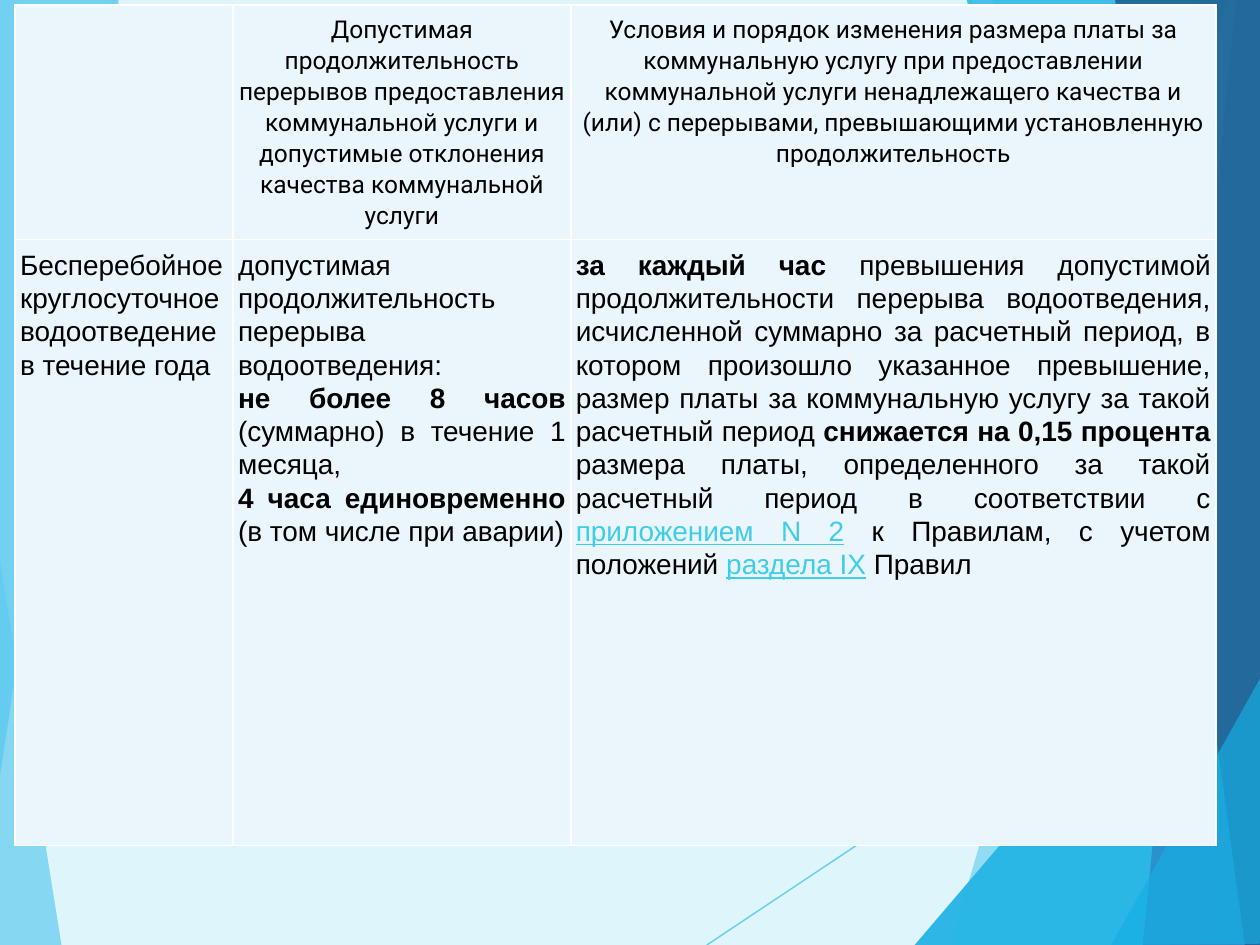
import pptx
import pptx.dml.color
import pptx.enum.shapes
import pptx.enum.text
import pptx.oxml
import pptx.oxml.ns
import pptx.util
from pptx.util import Inches

COLORS = {
    "background": "DFF5FC", "sky": "5FCBEF", "cyan": "17B0E4",
    "blue": "2E83C3", "navy": "226292", "cell": "EAF6FC",
    "border": "FFFFFF", "text": "000000", "link": "3FCDE7",
}
RGB = {name: pptx.dml.color.RGBColor.from_string(code) for name, code in COLORS.items()}
ALIGN = pptx.enum.text.PP_ALIGN
qn = pptx.oxml.ns.qn


def paint(fill, color, opacity):
    """Give a fill a solid colour with an opacity in percent."""
    fill.solid()
    fill.fore_color.rgb = RGB[color]
    tone = fill._xPr.find(qn("a:solidFill"))[0]
    tone.append(tone.makeelement(qn("a:alpha"), {"val": str(opacity * 1000)}))


def add_text(para, text, size=16, font="Arial", color="text", bold=False, underline=False):
    span = para.add_run()
    span.text = text
    span.font.size = pptx.util.Pt(size)
    span.font.name = font
    span.font.color.rgb = RGB[color]
    span.font.bold = bold
    span.font.underline = underline


deck = pptx.Presentation()
deck.slide_width, deck.slide_height = Inches(10), Inches(7.5)
page = deck.slides.add_slide(deck.slide_layouts[6])
page.background.fill.solid()
page.background.fill.fore_color.rgb = RGB["background"]

# Background facets: colour, opacity, corner points
left_bottom = ("sky", 70, [(-0.01, 4.39), (0.49, 7.51), (-0.01, 7.5)])
left_top = ("sky", 85, [(-0.01, 0), (0.94, -0.01), (0.94, 0.01), (-0.01, 6.22)])
right_facets = [
    ("sky", 36, [(9.75, 0), (7.54, 7.5), (10.02, 7.51), (10.01, 0.01)]),
    ("sky", 20, [(7.88, -0.01), (9.19, 7.5), (10.01, 7.5), (10.01, -0.01)]),
    ("cyan", 66, [(7.26, 7.5), (10, 4.29), (10.01, 7.5)]),
    ("cyan", 50, [(7.67, -0.01), (9.7, 7.5), (10.01, 7.49), (10.01, -0.01)]),
    ("blue", 70, [(9.81, -0.01), (9.07, 7.5), (10.01, 7.5), (10, -0.01)]),
    ("navy", 82, [(8.85, -0.01), (9.88, 7.5), (10.02, 7.5), (10, -0.01)]),
    ("cyan", 66, [(8.82, 7.5), (10.02, 5.35), (10.02, 7.49)]),
]
rays = [("sky", 70, [(5.61, 7.5), (10.01, 4.57)]), ("sky", 70, [(7.7, 0), (9.04, 7.5)])]

# The right-hand facets lie in two identical layers
right_layer = rays + right_facets
for color, opacity, points in [left_bottom] + right_layer * 2 + [left_top]:
    corners = [(Inches(x), Inches(y)) for x, y in points]
    if len(corners) == 2:
        ray = page.shapes.add_connector(
            pptx.enum.shapes.MSO_CONNECTOR.STRAIGHT, *corners[0], *corners[1])
        ray.line.width = pptx.util.Pt(0.75)
        paint(ray.line.fill, color, opacity)
        ray._element.spPr.append(pptx.oxml.parse_xml(
            f'<a:effectLst {pptx.oxml.ns.nsdecls("a")}/>'))
    else:
        builder = page.shapes.build_freeform(*corners[0])
        builder.add_line_segments(corners[1:], close=True)
        facet = builder.convert_to_shape()
        facet.shadow.inherit = False
        facet.line.fill.background()
        paint(facet.fill, color, opacity)

# Table content: rows of cells, cells of paragraphs, paragraphs of (text, format)
heading = {"size": 14, "font": "Roboto"}
strong = {"bold": True}
link = {"color": "link", "underline": True}
rows = [
    [
        [],
        [[("Допустимая продолжительность перерывов предоставления коммунальной услуги "
           "и допустимые отклонения качества коммунальной услуги", heading)]],
        [[("Условия и порядок изменения размера платы за коммунальную услугу при "
           "предоставлении коммунальной услуги ненадлежащего качества и (или) с "
           "перерывами, превышающими установленную продолжительность", heading)]],
    ],
    [
        [[("Бесперебойное круглосуточное водоотведение в течение года", {})]],
        [
            [("допустимая продолжительность перерыва водоотведения:", {})],
            [("не более 8 часов ", strong), ("(суммарно) в течение 1 месяца,", {})],
            [("4 часа единовременно ", strong), ("(в том числе при аварии)", {})],
        ],
        [[
            ("за каждый час ", strong),
            ("превышения допустимой продолжительности перерыва водоотведения, "
             "исчисленной суммарно за расчетный период, в котором произошло указанное "
             "превышение, размер платы за коммунальную услугу за такой расчетный период ", {}),
            ("снижается на 0,15 процента ", strong),
            ("размера платы, определенного за такой расчетный период в соответствии с ", {}),
            ("приложением N 2", link),
            (" к Правилам, с учетом положений ", {}),
            ("раздела IX", link),
            (" Правил", {}),
        ]],
    ],
]
widths, heights = [1.73, 2.68, 5.12], [1.86, 4.81]
table = page.shapes.add_table(
    len(rows), len(widths), Inches(0.12), Inches(0.04),
    Inches(sum(widths)), Inches(sum(heights))).table
table.first_row = table.horz_banding = False
for column, width in zip(table.columns, widths):
    column.width = Inches(width)
for row, height in zip(table.rows, heights):
    row.height = Inches(height)

for row_index, row in enumerate(rows):
    for column_index, paragraphs in enumerate(row):
        cell = table.cell(row_index, column_index)
        cell.margin_left = cell.margin_right = Inches(0.04)
        cell.margin_top = cell.margin_bottom = Inches(0.07)
        properties = cell._tc.get_or_add_tcPr()
        for side in ("lnL", "lnR", "lnT", "lnB"):
            properties.append(pptx.oxml.parse_xml(
                f'<a:{side} {pptx.oxml.ns.nsdecls("a")} w="12700"><a:solidFill>'
                f'<a:srgbClr val="{COLORS["border"]}"/></a:solidFill></a:{side}>'))
        cell.fill.solid()
        cell.fill.fore_color.rgb = RGB["cell"]
        for index, spans in enumerate(paragraphs):
            frame = cell.text_frame
            para = frame.add_paragraph() if index else frame.paragraphs[0]
            para.alignment = ALIGN.JUSTIFY if row_index else ALIGN.CENTER
            para.line_spacing = 1.07
            for text, style in spans:
                add_text(para, text, **style)

deck.save("out.pptx")
